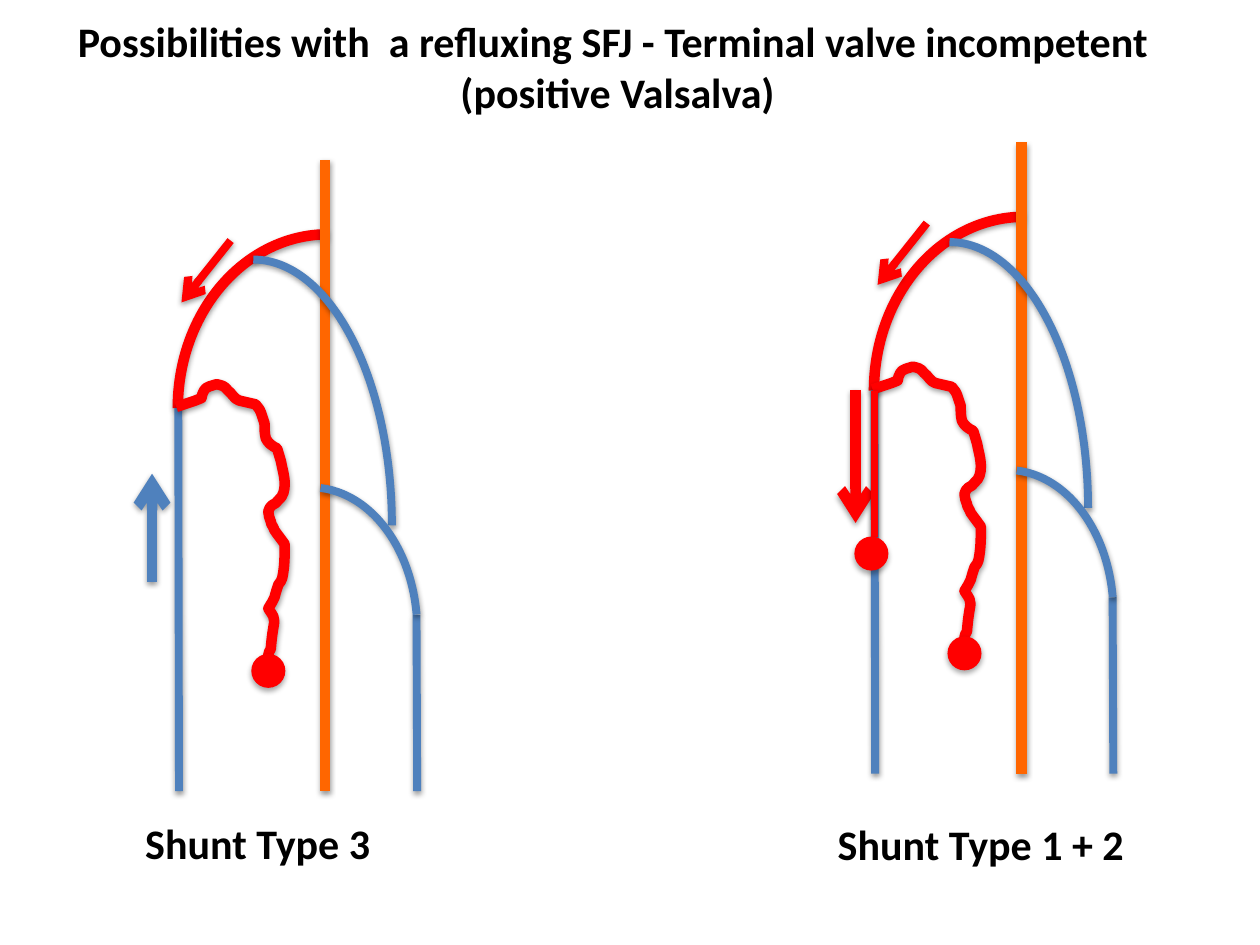
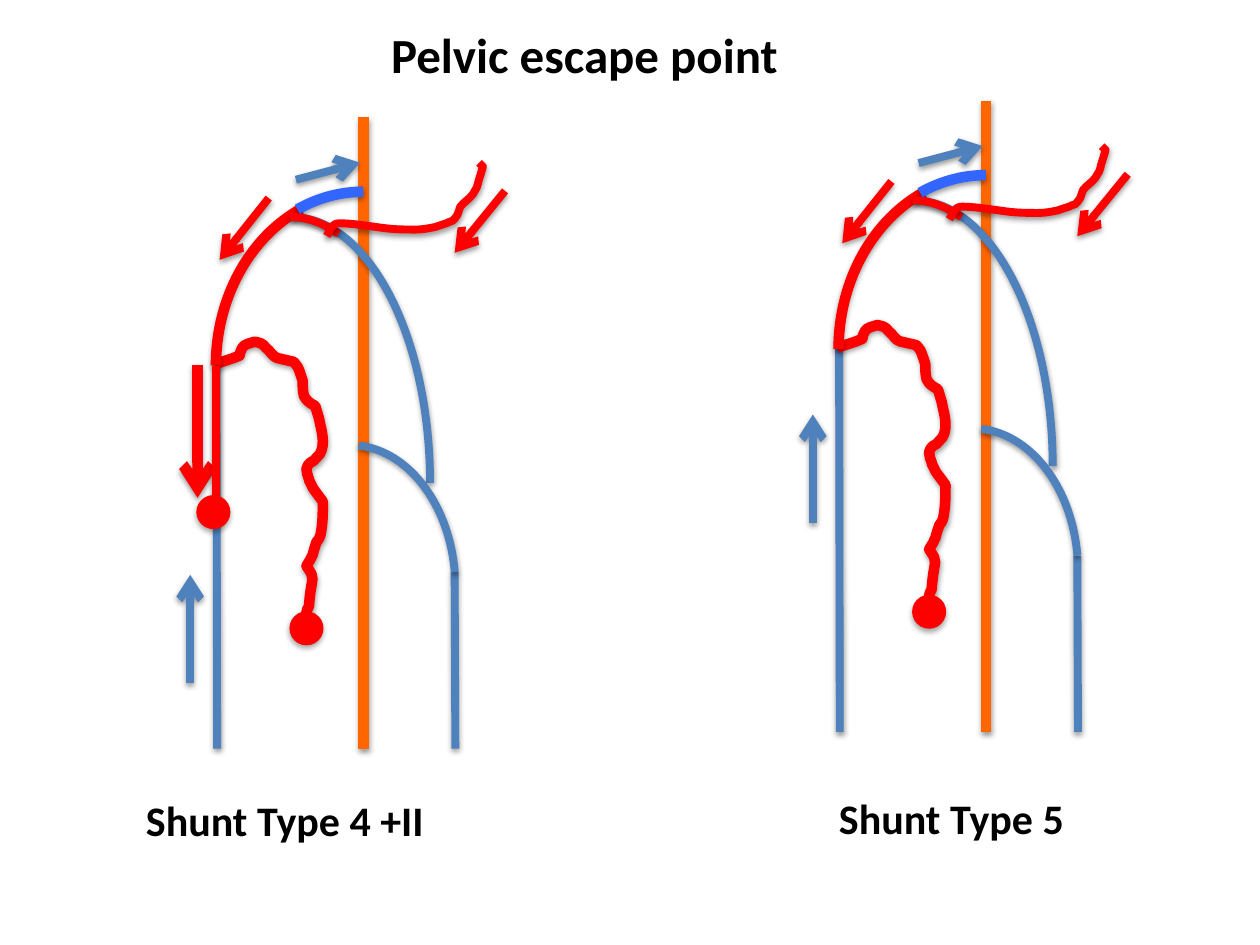
from lxml import etree
from pptx import Presentation
from pptx.dml.color import RGBColor
from pptx.enum.shapes import MSO_CONNECTOR, MSO_SHAPE
from pptx.enum.text import MSO_AUTO_SIZE, PP_ALIGN
from pptx.oxml.ns import qn
from pptx.util import Pt

STRAIGHT = MSO_CONNECTOR.STRAIGHT
ARC, OVAL = MSO_SHAPE.ARC, MSO_SHAPE.OVAL
LEFT, CENTER = PP_ALIGN.LEFT, PP_ALIGN.CENTER
GROW = MSO_AUTO_SIZE.SHAPE_TO_FIT_TEXT

BLACK = RGBColor(0x00, 0x00, 0x00)
REFLUX = RGBColor(0xFF, 0x00, 0x00)
NORMAL = RGBColor(0x4F, 0x81, 0xBD)
DEEP = RGBColor(0xFF, 0x66, 0x00)
JUNCTION = RGBColor(0x33, 0x66, 0xFF)
FONT = "Calibri"
THICK, THIN = 6, 4.5
DOT = 18.7

# Frames and points are measured from the top of the deep vein.
DEEP_LENGTH = 360.7
CROSSE = (-84.2, 42.5, 171.4, 198.7)
ANTERIOR = (-120.2, 56.9, 158.4, 303.8)
POPLITEAL = (-68.4, 187.2, 121, 163.4)
KNEE = (-83.9, 141.8)

# Outlines start at 0, 0 and count in grid steps: a pair of numbers ends a
# line, six numbers give the two handles and the end of a curve.
GRID = 0.72
TRIBUTARY_START = (-85, 141.1)
TRIBUTARY = [
    (15, -5), (20, -7), (21, -9, 20, -11, 22, -13),
    (23, -16, 29, -17, 32, -18), (36, -17, 38, -17, 41, -13),
    (44, -11, 46, -6, 50, -5), (63, -2), (64, 0, 65, 0, 66, 2),
    (67, 3, 67, 5, 68, 7), (69, 9, 69, 11, 70, 13),
    (70, 17, 70, 21, 71, 25), (73, 29, 76, 31, 80, 33),
    (83, 43), (84, 48), (85, 52, 86, 57, 86, 61),
    (86, 66, 85, 71, 81, 74), (80, 76, 78, 77, 76, 78),
    (75, 79, 73, 81, 73, 83), (73, 86, 74, 88, 75, 91),
    (75, 93, 77, 95, 78, 98), (80, 101, 84, 106, 86, 109),
    (86, 118, 86, 127, 84, 136), (84, 138, 82, 139, 81, 141),
    (80, 144, 79, 147, 78, 151), (77, 152, 77, 154, 76, 155),
    (73, 160), (81, 172, 77, 165, 75, 192),
    (74, 194, 73, 195, 73, 197), (73, 200, 73, 203, 73, 207),
]
PELVIC_START = (-20.9, 67.7)
PELVIC_VEIN = [
    (2, -3, 3, -6, 5, -8), (7, -10, 9, -10, 10, -10),
    (17, -10, 25, -9, 32, -8), (48, -6, 49, -5, 71, -5),
    (76, -5, 81, -6, 86, -7), (89, -8, 92, -9, 95, -10),
    (96, -11, 98, -11, 100, -12), (101, -13, 103, -15, 104, -17),
    (105, -19, 105, -21, 106, -23), (109, -27, 113, -29, 116, -33),
    (119, -38), (120, -40, 120, -42, 121, -45),
    (122, -48, 124, -55, 124, -55), (121, -58),
]


class Board:
    """Draws on the current slide, relative to a movable origin."""

    def __init__(self, prs):
        self.prs = prs
        self.origin = (0, 0)

    def new_slide(self):
        self.slide = self.prs.slides.add_slide(self.prs.slide_layouts[6])
        self.shapes = self.slide.shapes

    def at(self, x, y):
        return Pt(self.origin[0] + x), Pt(self.origin[1] + y)

    def text(self, text, x, y, w, h, size=24, align=LEFT, wrap=True):
        box = self.slide.shapes.add_textbox(Pt(x), Pt(y), Pt(w), Pt(h))
        tf = box.text_frame
        tf.word_wrap = wrap
        tf.auto_size = GROW
        tf.text = text
        for p in tf.paragraphs:
            p.alignment = align
            for r in p.runs:
                r.font.name, r.font.size, r.font.bold = FONT, Pt(size), True
                r.font.color.rgb = BLACK

    def finish(self, sp, color, width, distance=20000, alpha=38000):
        """Set the outline and the soft shadow below it."""
        sp.line.color.rgb = color
        sp.line.width = Pt(width)
        effects = etree.SubElement(sp._element.spPr, qn("a:effectLst"))
        shadow = etree.SubElement(
            effects, qn("a:outerShdw"), blurRad="40000", dist=str(distance),
            dir="5400000", rotWithShape="0")
        black = etree.SubElement(shadow, qn("a:srgbClr"), val=str(BLACK))
        etree.SubElement(black, qn("a:alpha"), val=str(alpha))

    def line(self, start, end, color, width=THIN):
        sp = self.shapes.add_connector(STRAIGHT, *self.at(*start), *self.at(*end))
        self.finish(sp, color, width)
        return sp

    def arrow(self, start, end, color, width=THIN):
        sp = self.line(start, end, color, width)
        etree.SubElement(sp.line._get_or_add_ln(), qn("a:tailEnd"), type="arrow")

    def arc(self, frame, color, width=THIN, angles=None, flip=False):
        x, y, w, h = frame
        sp = self.shapes.add_shape(ARC, *self.at(x, y), Pt(w), Pt(h))
        if angles:
            sp.adjustments[0], sp.adjustments[1] = angles
        if flip:
            sp._element.spPr.xfrm.set("flipH", "1")
        sp.fill.background()
        self.finish(sp, color, width)

    def outline(self, start, segments, color, width):
        """Draw a freeform, turning six-number segments into Bézier curves."""
        def place(x, y):
            return self.at(start[0] + x * GRID, start[1] + y * GRID)

        builder = self.shapes.build_freeform(*place(0, 0))
        builder.add_line_segments([place(*s[-2:]) for s in segments], close=False)
        sp = builder.convert_to_shape()
        for step, s in zip(list(sp._element.iter(qn("a:lnTo"))), segments):
            if len(s) == 6:
                step.tag = qn("a:cubicBezTo")
                for i, (x, y) in enumerate((s[:2], s[2:4])):
                    px, py = place(x, y)
                    pt = etree.Element(qn("a:pt"), x=str(px - sp.left),
                                       y=str(py - sp.top))
                    step.insert(i, pt)
        sp.fill.background()
        self.finish(sp, color, width)

    def dot(self, x, y):
        sp = self.shapes.add_shape(OVAL, *self.at(x, y), Pt(DOT), Pt(DOT))
        sp.fill.solid()
        sp.fill.fore_color.rgb = REFLUX
        self.finish(sp, REFLUX, 0.75, 23000, 35000)

    def leg(self, x, y, pelvic=False):
        """Draw the veins shared by all shunt types, deep vein top at x, y."""
        self.origin = (x, y)
        if pelvic:
            self.shapes = self.slide.shapes.add_group_shape().shapes
        else:
            self.arc(CROSSE, REFLUX, THICK, flip=True)
        self.line((0, 0), (0, DEEP_LENGTH), DEEP, THICK)
        self.arc(ANTERIOR, NORMAL)
        self.line(KNEE, (-83.5, DEEP_LENGTH), NORMAL)
        self.line((52.2, 259.9), (52.6, DEEP_LENGTH), NORMAL)
        self.arc(POPLITEAL, NORMAL, angles=(164.209, 210.863))
        self.outline(TRIBUTARY_START, TRIBUTARY, REFLUX, THICK)
        self.dot(-41.8, 282.6)
        self.arrow((-54, 46.1), (-82.1, 81.4), REFLUX)
        if pelvic:
            self.pelvic_escape()

    def pelvic_escape(self):
        self.arc(CROSSE, REFLUX, THICK, (175.484, 0), flip=True)
        self.arc((-85.7, *CROSSE[1:]), JUNCTION, THICK, (162, 175.716), flip=True)
        self.arc((-121, *ANTERIOR[1:]), REFLUX, THIN, (162, 168.623))
        self.outline(PELVIC_START, PELVIC_VEIN, REFLUX, THIN)
        self.arrow((81, 42), (52.2, 77.4), REFLUX)
        self.arrow((-38.5, 35.6), (-1.8, 25.9), NORMAL)

    def upward_flow(self, y, width=THIN):
        self.arrow((-98.9, y), (-98.9, y - 61.9), NORMAL, width)

    def trunk_reflux(self, dot_y):
        """Draw reflux down the trunk to a re-entry dot."""
        self.arrow((-94.7, 141.4), (-94.7, 217.4), REFLUX, THICK)
        self.line(KNEE, (KNEE[0], 225.7), REFLUX)
        self.dot(-95, dot_y)


def terminal_valve_slide(board):
    board.new_slide()
    board.text("Possibilities with  a refluxing SFJ - Terminal valve incompetent \n"
               "(positive Valsalva)", 0, 5.4, 706, 65.5, align=CENTER)
    board.leg(185.8, 91.4)
    board.upward_flow(241.2, THICK)
    board.leg(583.6, 81.4)
    board.trunk_reflux(225.6)
    board.text("Shunt Type 3", 75.9, 463.7, 178.6, 36)
    board.text("Shunt Type 1 + 2", 471.6, 464.4, 178.6, 36)


def pelvic_escape_slide(board):
    board.new_slide()
    board.text("Shunt Type 4 +II", 76.3, 450.7, 178.6, 36)
    board.text("Pelvic escape point", 216.4, 10.4, 239, 41, size=28, wrap=False)
    board.leg(563.4, 57.6, pelvic=True)
    board.upward_flow(241.2)
    board.text("Shunt Type 5", 472.3, 449.3, 178.6, 36)
    board.leg(207.6, 67.1, pelvic=True)
    board.upward_flow(323.3)
    board.trunk_reflux(216.2)


def main():
    prs = Presentation()
    prs.slide_width, prs.slide_height = Pt(720), Pt(540)
    board = Board(prs)
    terminal_valve_slide(board)
    pelvic_escape_slide(board)
    prs.save("out.pptx")


if __name__ == "__main__":
    main()
